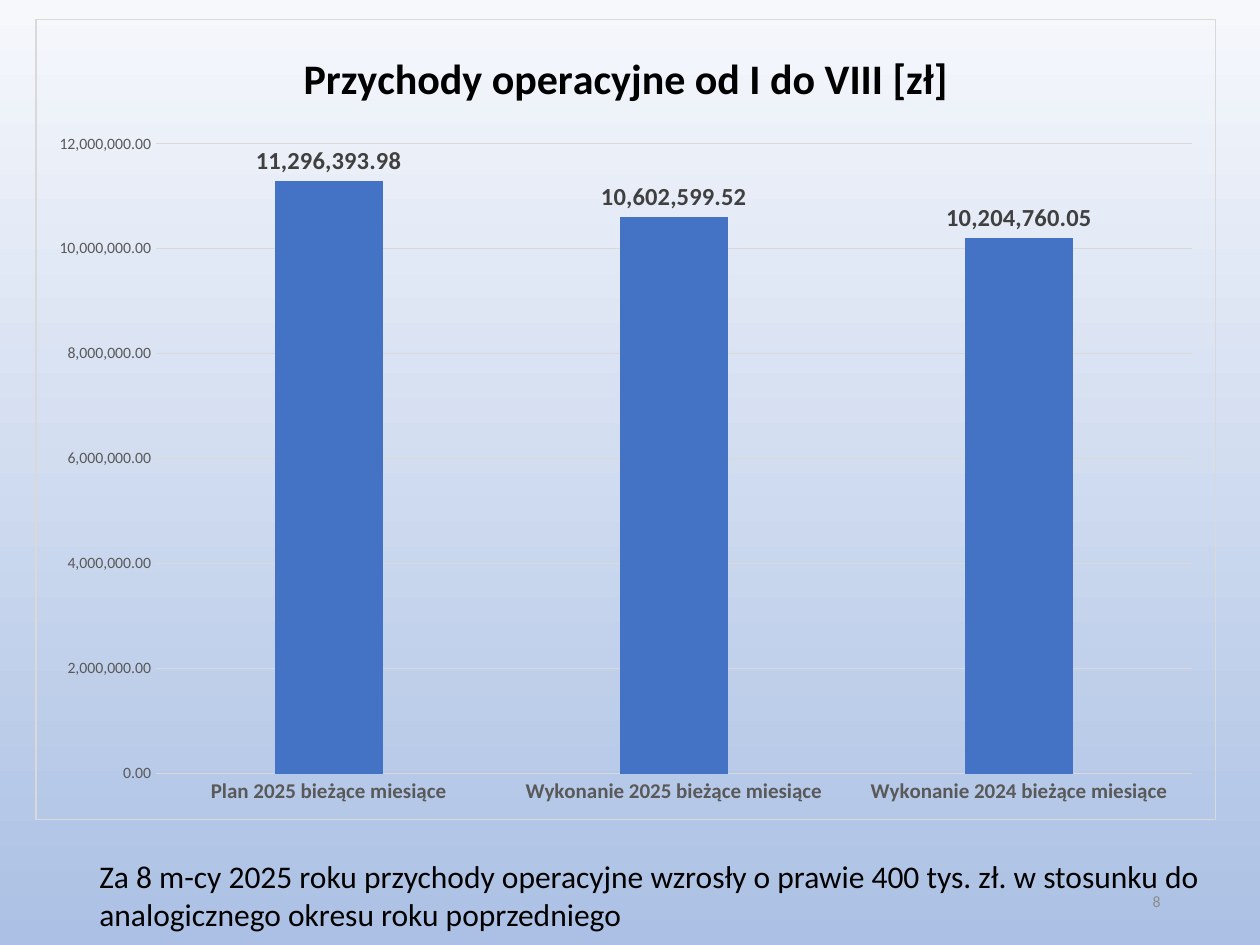
import pptx
import pptx.chart.data
import pptx.dml.color
import pptx.enum.chart
import pptx.enum.text
import pptx.util
from lxml import etree

Pt = pptx.util.Pt
RGB = pptx.dml.color.RGBColor.from_string
XL = pptx.enum.chart
TEXT = pptx.enum.text

THEME = {
    "sky_top": RGB("F6F8FC"),
    "sky_bottom": RGB("ABC0E4"),
    "bar": RGB("4472C4"),
    "rule": RGB("D9D9D9"),
    "title": {"size": Pt(24), "bold": True, "color": RGB("000000")},
    "category": {"size": Pt(12), "bold": True, "color": RGB("595959")},
    "value": {"size": Pt(9), "bold": False, "color": RGB("595959")},
    "label": {"size": Pt(14), "bold": True, "color": RGB("404040")},
    "comment": {"size": Pt(18), "color": RGB("000000")},
    "number": {"size": Pt(9), "color": RGB("8C8C8C")},
}
MONEY = "#,##0.00"


def style_font(font, style):
    font.name = "Calibri"
    for name, value in style.items():
        if name == "color":
            font.color.rgb = value
        else:
            setattr(font, name, value)


def add_text(page, place, lines, style, frame_format, align):
    box = page.shapes.add_textbox(*map(Pt, place))
    for name, value in frame_format.items():
        setattr(box.text_frame, name, value)
    for index, line in enumerate(lines):
        para = box.text_frame.paragraphs[0] if index == 0 else box.text_frame.add_paragraph()
        para.alignment = align
        span = para.add_run()
        span.text = line
        style_font(span.font, style)


deck = pptx.Presentation()
deck.slide_width, deck.slide_height = Pt(720), Pt(540)
page = deck.slides.add_slide(deck.slide_layouts[6])

# Background, running from top to bottom
sky = page.background.fill
sky.gradient()
sky.gradient_angle = 270
for stop, name in zip(sky.gradient_stops, ("sky_top", "sky_bottom")):
    stop.color.rgb = THEME[name]
sky.gradient_stops[0].position, sky.gradient_stops[1].position = 0, 1

# Page number
add_text(page, (508.32, 500.4, 162, 28.8), ["8"], THEME["number"],
         {"word_wrap": True, "vertical_anchor": TEXT.MSO_ANCHOR.MIDDLE}, TEXT.PP_ALIGN.RIGHT)

# Revenue chart
revenue = pptx.chart.data.CategoryChartData(number_format=MONEY)
revenue.categories = [f"{name} bieżące miesiące"
                      for name in ("Plan 2025", "Wykonanie 2025", "Wykonanie 2024")]
revenue.add_series("Series 1", (11296393.98, 10602599.52, 10204760.05))
chart = page.shapes.add_chart(XL.XL_CHART_TYPE.COLUMN_CLUSTERED, Pt(20.16), Pt(10.8),
                              Pt(674.64), Pt(457.92), revenue).chart
chart.has_legend = False
chart.font.name, chart.font.size = "Calibri", Pt(10)
chart.has_title = True
chart.chart_title.include_in_layout = False
title = chart.chart_title.text_frame.paragraphs[0].add_run()
title.text = "Przychody operacyjne od I do VIII [zł]"
style_font(title.font, THEME["title"])

# Chart border
chart.element.find(pptx.oxml.ns.qn("c:chart")).addnext(etree.fromstring(
    '<c:spPr xmlns:c="http://schemas.openxmlformats.org/drawingml/2006/chart"'
    ' xmlns:a="http://schemas.openxmlformats.org/drawingml/2006/main"><a:noFill/>'
    f'<a:ln w="{Pt(0.75)}"><a:solidFill><a:srgbClr val="{THEME["rule"]}"/></a:solidFill></a:ln>'
    '</c:spPr>'))

# Axes and gridlines
values, categories = chart.value_axis, chart.category_axis
for axis, style in ((values, "value"), (categories, "category")):
    axis.major_tick_mark = axis.minor_tick_mark = XL.XL_TICK_MARK.NONE
    style_font(axis.tick_labels.font, THEME[style])
values.minimum_scale = 0
values.tick_labels.number_format = MONEY
values.tick_labels.number_format_is_linked = False
values.format.line.fill.background()
for line in (values.major_gridlines.format.line, categories.format.line):
    line.color.rgb = THEME["rule"]
    line.width = Pt(0.75)

# Bars and their labels
plot = chart.plots[0]
for name, value in {"gap_width": 219, "overlap": -27, "vary_by_categories": False}.items():
    setattr(plot, name, value)
bars = plot.series[0]
bars.format.fill.solid()
bars.format.fill.fore_color.rgb = THEME["bar"]
labels = bars.data_labels
for name, value in {"show_value": True, "position": XL.XL_LABEL_POSITION.OUTSIDE_END,
                    "number_format": MONEY, "number_format_is_linked": False}.items():
    setattr(labels, name, value)
style_font(labels.font, THEME["label"])

# Comment below the chart
add_text(page, (49.68, 486, 654.48, 51.12),
         ["Za 8 m-cy 2025 roku przychody operacyjne wzrosły o prawie 400 tys. zł. w stosunku do",
          "analogicznego okresu roku poprzedniego"], THEME["comment"],
         {"word_wrap": False, "auto_size": TEXT.MSO_AUTO_SIZE.SHAPE_TO_FIT_TEXT},
         TEXT.PP_ALIGN.LEFT)

deck.save("out.pptx")
